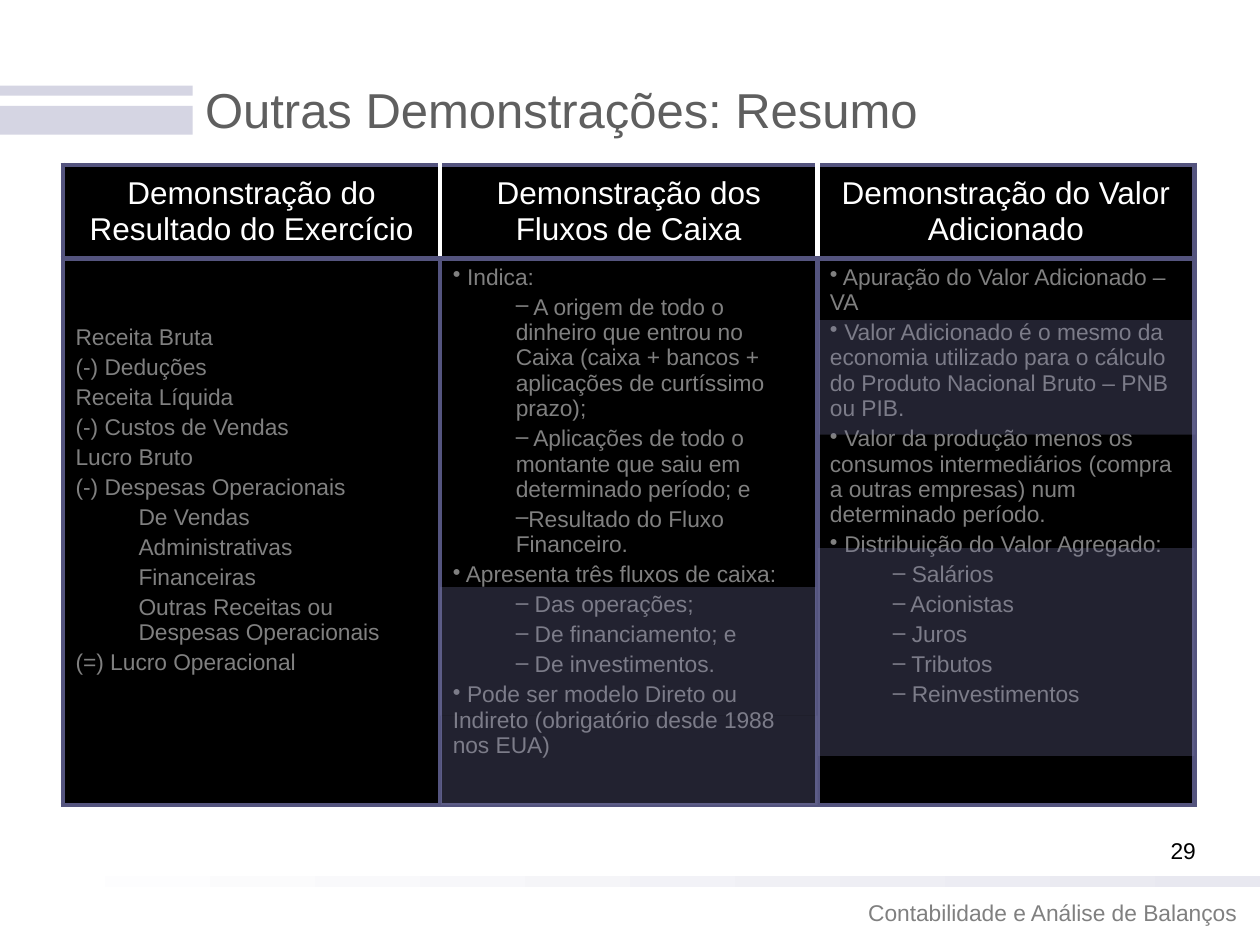
from dataclasses import dataclass
from typing import NamedTuple, Optional

from lxml.etree import SubElement
from pptx import Presentation
from pptx.dml.color import RGBColor
from pptx.enum.shapes import MSO_SHAPE as Shape
from pptx.enum.text import MSO_ANCHOR as Anchor, PP_ALIGN as Align
from pptx.oxml.ns import qn
from pptx.util import Inches, Pt


@dataclass(frozen=True)
class Theme:
    font: str = "Arial"
    title: str = "5F5F5F"
    body: str = "808080"
    black: str = "000000"
    white: str = "FFFFFF"
    accent: str = "D5D5E3"
    band_end: str = "E8E8F0"
    border: str = "54547E"
    veil: str = "73739F"
    veil_alpha: int = 30
    border_pt: int = 3
    title_pt: int = 28
    header_pt: int = 18
    body_pt: int = 13
    gap_pt: float = 2.6


class Box(NamedTuple):
    col: float
    row: float
    cols: float
    rows: float


class Item(NamedTuple):
    text: str
    level: int = 0
    bullet: Optional[str] = None


class Column(NamedTuple):
    header: str
    items: list
    top: float = 0.5


def point(text: str) -> Item:
    return Item(text, 0, "•")


def dash(text: str) -> Item:
    return Item(text, 1, "–")


T = Theme()
GRID_COLS, GRID_ROWS = 100, 75
TABLE = Box(5, 13.1, 89.8, 50.8)
HEADER_ROWS = 7.4

COLUMNS = [
    Column("Demonstração do Resultado do Exercício", [
        Item("Receita Bruta"),
        Item("(-) Deduções"),
        Item("Receita Líquida"),
        Item("(-) Custos de Vendas"),
        Item("Lucro Bruto"),
        Item("(-) Despesas Operacionais"),
        Item("De Vendas", 1),
        Item("Administrativas", 1),
        Item("Financeiras", 1),
        Item("Outras Receitas ou Despesas Operacionais", 1),
        Item("(=) Lucro Operacional"),
    ], top=5.3),
    Column("Demonstração dos Fluxos de Caixa", [
        point(" Indica:"),
        dash(" A origem de todo o dinheiro que entrou no Caixa "
             "(caixa + bancos + aplicações de curtíssimo prazo);"),
        dash(" Aplicações de todo o montante que saiu em determinado período; e"),
        dash("Resultado do Fluxo Financeiro."),
        point(" Apresenta três fluxos de caixa:"),
        dash(" Das operações;"),
        dash(" De financiamento; e"),
        dash(" De investimentos."),
        point(" Pode ser modelo Direto ou Indireto (obrigatório desde 1988 nos EUA)"),
    ]),
    Column("Demonstração do Valor Adicionado", [
        point(" Apuração do Valor Adicionado – VA"),
        point(" Valor Adicionado é o mesmo da economia utilizado para o cálculo "
              "do Produto Nacional Bruto – PNB ou PIB."),
        point(" Valor da produção menos os consumos intermediários "
              "(compra a outras empresas) num determinado período."),
        point(" Distribuição do Valor Agregado:"),
        dash(" Salários"),
        dash(" Acionistas"),
        dash(" Juros"),
        dash(" Tributos"),
        dash(" Reinvestimentos"),
    ]),
]

VEILS = [
    Box(34.9, 46.6, 29.9, 10.2),
    Box(35, 56.8, 29.9, 7.1),
    Box(65, 25.4, 29.9, 9.1),
    Box(64.9, 43.5, 29.9, 16.5),
]

prs = Presentation()
prs.slide_width, prs.slide_height = Inches(10), Inches(7.5)
s = prs.slides.add_slide(prs.slide_layouts[6])


def across(cols: float) -> int:
    return round(prs.slide_width * cols / GRID_COLS)


def down(rows: float) -> int:
    return round(prs.slide_height * rows / GRID_ROWS)


def place(box: Box) -> tuple:
    return across(box.col), down(box.row), across(box.cols), down(box.rows)


def write(p, text: str, *, size: float, color: str, align=Align.LEFT,
          level: int = 0, bullet: Optional[str] = None, before: float = 0) -> None:
    p.alignment, p.level, p.space_before = align, level, Pt(before)
    pPr = p._p.get_or_add_pPr()
    pPr.set("marL", str(across(5 * level)))
    pPr.set("indent", "0")
    if bullet:
        SubElement(pPr, qn("a:buChar"), char=bullet)
    else:
        SubElement(pPr, qn("a:buNone"))
    r = p.add_run()
    r.text = text
    r.font.name, r.font.size = T.font, Pt(size)
    r.font.color.rgb = RGBColor.from_string(color)


def add_text(box: Box, text: str, *, anchor=Anchor.TOP, **style) -> None:
    tf = s.shapes.add_textbox(*place(box)).text_frame
    tf.word_wrap, tf.vertical_anchor = True, anchor
    write(tf.paragraphs[0], text, **style)


def add_rect(box: Box, color: str, *, fade_to: Optional[str] = None,
             alpha: Optional[int] = None) -> None:
    sp = s.shapes.add_shape(Shape.RECTANGLE, *place(box))
    sp.shadow.inherit = False
    sp.line.fill.background()
    if fade_to:
        sp.fill.gradient()
        sp.fill.gradient_angle = 0
        for stop, shade in zip(sp.fill.gradient_stops, (color, fade_to)):
            stop.color.rgb = RGBColor.from_string(shade)
        return
    sp.fill.solid()
    sp.fill.fore_color.rgb = RGBColor.from_string(color)
    if alpha is not None:
        clr = sp.element.spPr.find(".//" + qn("a:srgbClr"))
        SubElement(clr, qn("a:alpha"), val=str(alpha * 1000))


def format_cell(cell, *, left: str, right: str) -> None:
    tcPr = cell._tc.get_or_add_tcPr()
    sides = {"L": left, "R": right, "T": T.border, "B": T.border}
    for side, color in sides.items():
        ln = SubElement(tcPr, qn("a:ln" + side), w=str(Pt(T.border_pt)))
        SubElement(SubElement(ln, qn("a:solidFill")), qn("a:srgbClr"), val=color)
    cell.fill.solid()
    cell.fill.fore_color.rgb = RGBColor.from_string(T.black)
    cell.margin_left = cell.margin_right = across(1)
    cell.margin_top = cell.margin_bottom = down(0.5)


def add_summary(box: Box, columns: list) -> None:
    last = len(columns) - 1
    tbl = s.shapes.add_table(2, len(columns), *place(box)).table
    tbl.first_row = tbl.horz_banding = False
    tbl.rows[0].height = down(HEADER_ROWS)
    tbl.rows[1].height = down(box.rows - HEADER_ROWS)
    for i, column in enumerate(columns):
        tbl.columns[i].width = across(box.cols / len(columns))
        head, body = tbl.cell(0, i), tbl.cell(1, i)
        format_cell(head, left=T.white if i else T.border,
                    right=T.white if i < last else T.border)
        head.vertical_anchor = Anchor.MIDDLE
        write(head.text_frame.paragraphs[0], column.header,
              size=T.header_pt, color=T.white, align=Align.CENTER)
        format_cell(body, left=T.border, right=T.border)
        body.margin_top = down(column.top)
        tf = body.text_frame
        for n, item in enumerate(column.items):
            p = tf.add_paragraph() if n else tf.paragraphs[0]
            write(p, item.text, size=T.body_pt, color=T.body, level=item.level,
                  bullet=item.bullet, before=T.gap_pt if n else 0)


add_rect(Box(0, 8.4, 15.3, 2.3), T.accent)
add_rect(Box(0, 6.8, 15.3, 0.8), T.accent)
add_rect(Box(0, 69.5, 100, 0.9), T.white, fade_to=T.band_end)
add_text(Box(46.9, 70.8, 52.2, 3.2), "Contabilidade e Análise de Balanços",
         size=T.body_pt, color=T.body, align=Align.RIGHT)
add_text(Box(89.8, 65.9, 8.2, 5), "29",
         size=T.body_pt, color=T.black, align=Align.CENTER)
add_text(Box(15.3, 2.4, 84.7, 12.5), "Outras Demonstrações: Resumo",
         anchor=Anchor.MIDDLE, size=T.title_pt, color=T.title)
add_summary(TABLE, COLUMNS)
for veil in VEILS:
    add_rect(veil, T.veil, alpha=T.veil_alpha)

prs.save("out.pptx")
